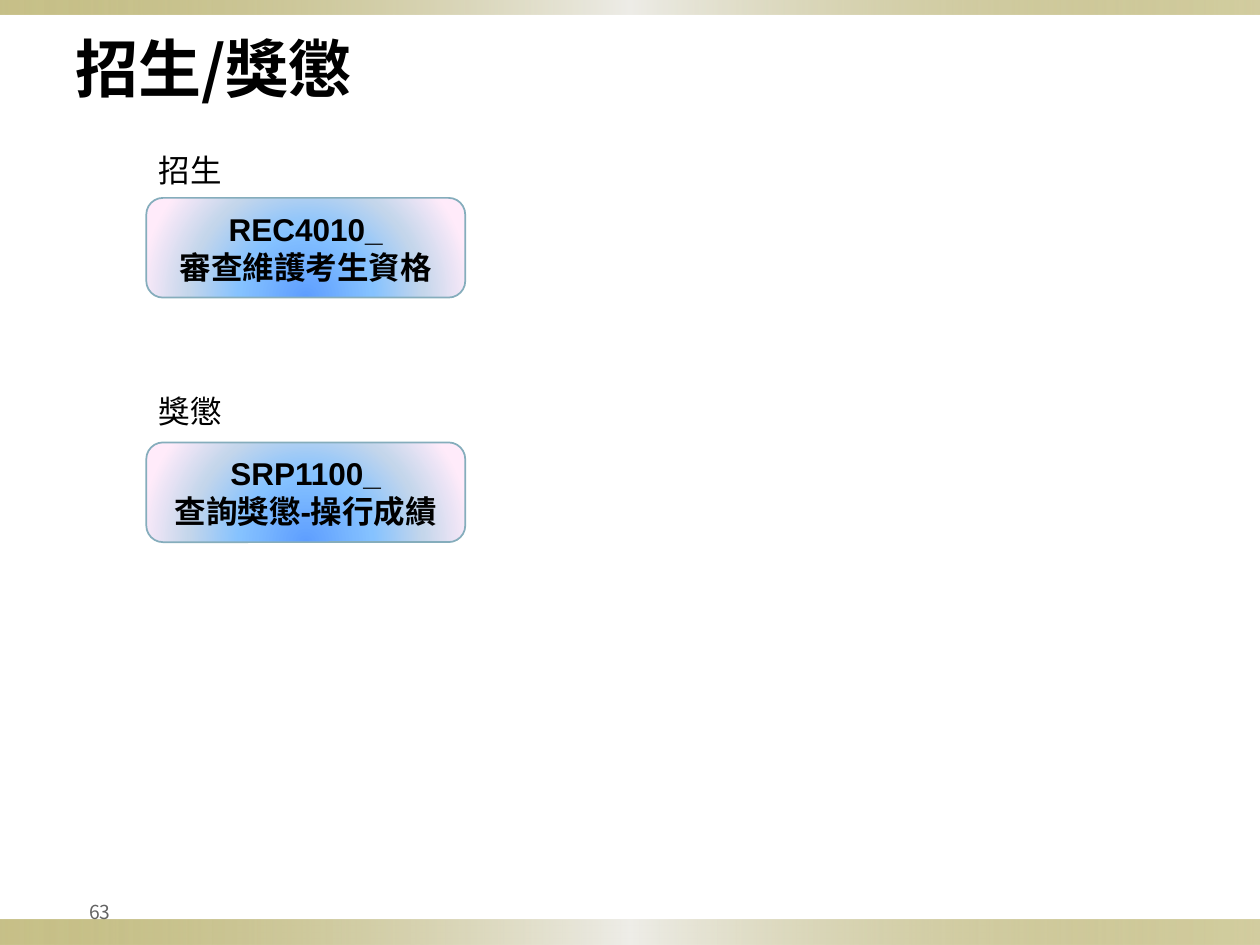
import pptx
import pptx.dml.color
import pptx.enum.shapes
import pptx.enum.text
import pptx.oxml
import pptx.oxml.ns
import pptx.util
from pptx.util import Cm

ALIGN = pptx.enum.text.PP_ALIGN
SHAPES = pptx.enum.shapes.MSO_SHAPE
CJK_FONT = "Noto Sans CJK SC"
LINEAR = '<a:lin ang="0" scaled="1"/>'
FROM_BOTTOM = '<a:path path="circle"><a:fillToRect l="50000" t="100000" r="50000"/></a:path>'
BAND_STOPS = [(0, "918415", 50), (50, "EEEDE8", 100), (100, "918415", 40)]
BOX_STOPS = [(0, "5E9EFF", 100), (40, "85C2FF", 100), (70, "C4D6EB", 100), (100, "FFEBFA", 100)]


def color(value):
    return pptx.dml.color.RGBColor.from_string(value)


class SlideBuilder:
    """Holds the style and the current slide, and adds each kind of element."""

    def __init__(self, slide):
        self.slide = slide
        self.ink = "000000"
        self.outline = "85ADBC"
        self.margin = Cm(0.13)

    def add_lines(self, frame, lines, size, font="Arial", bold=False, align=ALIGN.LEFT, ink=None):
        frame.vertical_anchor = pptx.enum.text.MSO_ANCHOR.MIDDLE
        for index, line in enumerate(lines):
            paragraph = frame.add_paragraph() if index else frame.paragraphs[0]
            paragraph.alignment = align
            run = paragraph.add_run()
            run.text = line
            run.font.name = font
            run.font.size = pptx.util.Pt(size)
            run.font.bold = bold
            run.font.color.rgb = color(ink or self.ink)
            east_asian = pptx.oxml.parse_xml(
                f'<a:ea {pptx.oxml.ns.nsdecls("a")} typeface="{CJK_FONT}"/>')
            run._r.rPr.find(pptx.oxml.ns.qn("a:latin")).addnext(east_asian)

    def gradient_shape(self, kind, left, top, width, height, stops, direction):
        shape = self.slide.shapes.add_shape(kind, Cm(left), Cm(top), Cm(width), Cm(height))
        shape.shadow.inherit = False
        shape.line.fill.background()
        shape.fill.gradient()
        stop_xml = "".join(
            f'<a:gs pos="{position * 1000}"><a:srgbClr val="{value}">'
            f'<a:alpha val="{alpha * 1000}"/></a:srgbClr></a:gs>'
            for position, value, alpha in stops)
        gradient = pptx.oxml.parse_xml(
            f'<a:gradFill {pptx.oxml.ns.nsdecls("a")} rotWithShape="1">'
            f'<a:gsLst>{stop_xml}</a:gsLst>{direction}</a:gradFill>')
        properties = shape._element.spPr
        properties.replace(properties.find(pptx.oxml.ns.qn("a:gradFill")), gradient)
        return shape

    def band(self, top, height):
        self.gradient_shape(SHAPES.RECTANGLE, 0, top, 25.4, height, BAND_STOPS, LINEAR)

    def title(self, text):
        title = self.slide.shapes.title
        title.left, title.top, title.width, title.height = Cm(1.27), Cm(0.13), Cm(22.86), Cm(2.46)
        self.add_lines(title.text_frame, [text], 36, CJK_FONT, bold=True)

    def label(self, text, left, top):
        box = self.slide.shapes.add_textbox(Cm(left), Cm(top), Cm(1.8), Cm(1.02))
        box.text_frame.word_wrap = False
        box.text_frame.auto_size = pptx.enum.text.MSO_AUTO_SIZE.SHAPE_TO_FIT_TEXT
        self.add_lines(box.text_frame, [text], 18)

    def function_box(self, lines, left, top):
        box = self.gradient_shape(
            SHAPES.ROUNDED_RECTANGLE, left, top, 6.43, 2.01, BOX_STOPS, FROM_BOTTOM)
        box.line.color.rgb = color(self.outline)
        box.line.width = pptx.util.Pt(1)
        frame = box.text_frame
        frame.margin_left = frame.margin_right = self.margin
        self.add_lines(frame, lines, 18, bold=True, align=ALIGN.CENTER)

    def page_number(self, text):
        box = self.slide.shapes.add_textbox(0, Cm(17.88), Cm(2.36), Cm(1.02))
        frame = box.text_frame
        frame.word_wrap = True
        frame.margin_left = frame.margin_right = self.margin
        frame.margin_top = frame.margin_bottom = self.margin
        self.add_lines(frame, [text], 11, CJK_FONT, align=ALIGN.RIGHT, ink="636363")


def main():
    presentation = pptx.Presentation()
    presentation.slide_width, presentation.slide_height = Cm(25.4), Cm(19.05)
    builder = SlideBuilder(presentation.slides.add_slide(presentation.slide_layouts[5]))
    builder.band(18.54, 0.51)
    builder.band(0, 0.3)
    builder.page_number("63")
    builder.title("招生/獎懲")
    sections = [
        ("招生", 2.92, ["REC4010_", "審查維護考生資格"], 3.99),
        ("獎懲", 7.77, ["SRP1100_", "查詢獎懲-操行成績"], 8.92),
    ]
    for name, label_top, lines, box_top in sections:
        builder.function_box(lines, 2.95, box_top)
        builder.label(name, 2.95, label_top)
    presentation.save("out.pptx")


if __name__ == "__main__":
    main()
